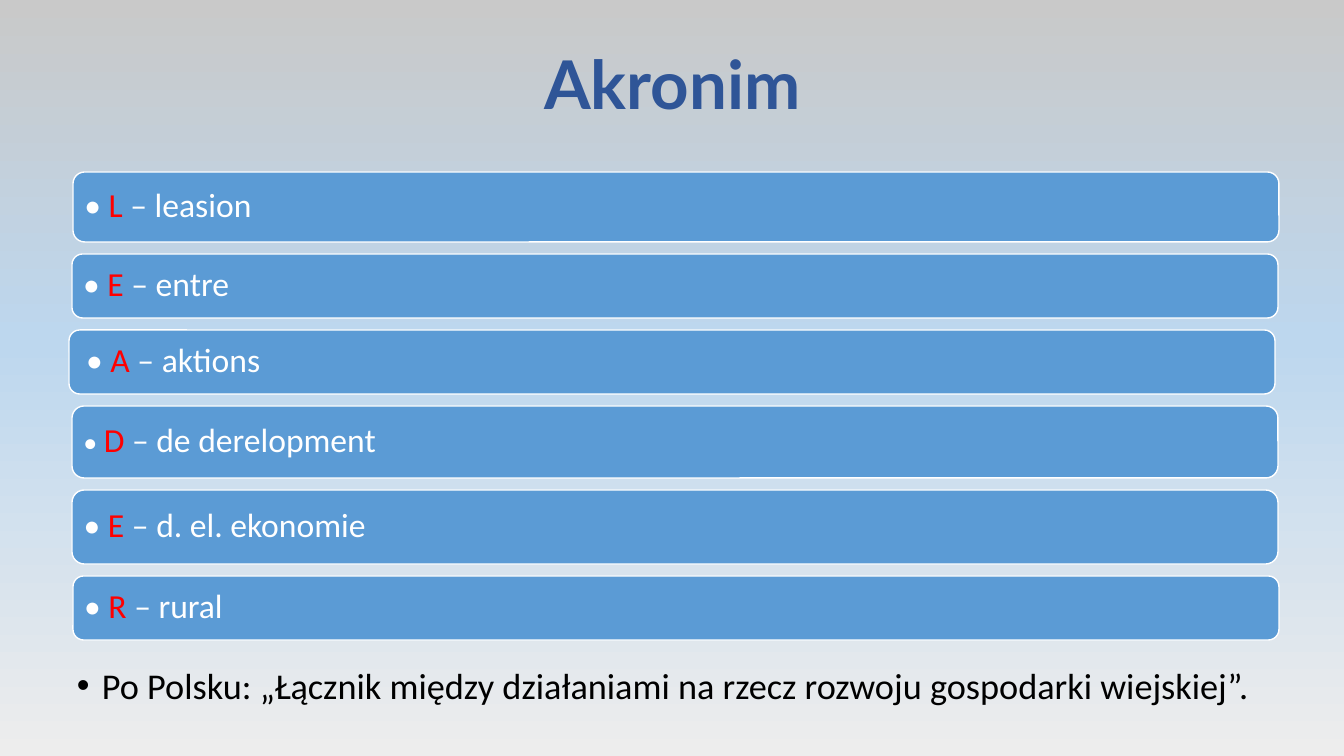
import copy

import pptx
import pptx.dml.color
import pptx.enum.shapes
import pptx.enum.text
import pptx.oxml
import pptx.oxml.ns
import pptx.util

PX = 914400 / 100.8
COLORS = {
    "title": "2F5597",
    "bar": "5B9BD5",
    "white": "FFFFFF",
    "letter": "FF0000",
    "black": "000000",
}
BACKGROUND = [(0, "C9C9C9"), (0.45, "BDD7EE"), (1, "EDEDED")]
BAR_GAP = 12
BARS = [
    {"letter": "L", "word": "leasion", "height": 70, "shift": 4},
    {"letter": "E", "word": "entre", "height": 64, "shift": 3},
    {"letter": "A", "word": "aktions", "height": 64, "shift": 0, "inset": 14},
    {"letter": "D", "word": "de derelopment", "height": 72, "shift": 3, "bullet_size": 20},
    {"letter": "E", "word": "d. el. ekonomie", "height": 74, "shift": 3},
    {"letter": "R", "word": "rural", "height": 64, "shift": 4},
]


def px(length):
    return pptx.util.Emu(round(length * PX))


def rgb(value):
    return pptx.dml.color.RGBColor.from_string(value)


def set_values(target, values):
    for name, value in values.items():
        setattr(target, name, value)


def add_span(para, text, color, size, font="Calibri", bold=False):
    span = para.add_run()
    span.text = text
    set_values(span.font, {"name": font, "size": pptx.util.Pt(size), "bold": bold})
    span.font.color.rgb = rgb(COLORS[color])


def add_text_box(page, box, anchor):
    shape = page.shapes.add_textbox(*map(px, box))
    set_values(shape.text_frame, {"word_wrap": True, "vertical_anchor": anchor})
    para = shape.text_frame.paragraphs[0]
    para.line_spacing = 0.9
    return para


def paint_background(page):
    fill = page.background.fill
    fill.gradient()
    fill.gradient_angle = 270
    stop_list = page.element.xpath(".//a:gsLst")[0]
    stop_list.insert(1, copy.deepcopy(stop_list[0]))
    for stop, (position, color) in zip(fill.gradient_stops, BACKGROUND):
        stop.position = position
        stop.color.rgb = rgb(color)


def add_title(page, box):
    para = add_text_box(page, box, pptx.enum.text.MSO_ANCHOR.MIDDLE)
    para.alignment = pptx.enum.text.PP_ALIGN.CENTER
    add_span(para, "Akronim", "title", 48, "Lato", True)


def add_bar(page, box, bar):
    shape = page.shapes.add_shape(
        pptx.enum.shapes.MSO_SHAPE.ROUNDED_RECTANGLE, *map(px, box))
    shape.shadow.inherit = False
    shape.fill.solid()
    shape.fill.fore_color.rgb = rgb(COLORS["bar"])
    shape.line.color.rgb = rgb(COLORS["white"])
    shape.line.width = pptx.util.Pt(1)
    set_values(shape.text_frame, {
        "word_wrap": True,
        "vertical_anchor": pptx.enum.text.MSO_ANCHOR.MIDDLE,
        "margin_left": px(bar.get("inset", 8)),
        "margin_top": px(8),
        "margin_bottom": px(8),
    })
    para = shape.text_frame.paragraphs[0]
    set_values(para, {"alignment": pptx.enum.text.PP_ALIGN.LEFT, "line_spacing": 0.9})
    add_span(para, "• ", "white", bar.get("bullet_size", 24))
    add_span(para, bar["letter"] + " ", "letter", 24)
    add_span(para, "– " + bar["word"], "white", 24)


def add_bars(page, box):
    left, top, width = box
    for bar in BARS:
        add_bar(page, (left + bar["shift"], top, width, bar["height"]), bar)
        top += bar["height"] + BAR_GAP


def add_translation(page, box):
    para = add_text_box(page, box, pptx.enum.text.MSO_ANCHOR.TOP)
    properties = para._p.get_or_add_pPr()
    properties.set("marL", str(px(25)))
    properties.set("indent", str(px(-25)))
    namespace = pptx.oxml.ns.nsdecls("a")
    for tag in ('buFont {} typeface="Arial"', 'buChar {} char="•"'):
        properties.append(pptx.oxml.parse_xml("<a:" + tag.format(namespace) + "/>"))
    add_span(
        para,
        "Po Polsku: „Łącznik między działaniami na rzecz rozwoju gospodarki wiejskiej”.",
        "black", 25.9)


def main():
    deck = pptx.Presentation()
    set_values(deck, {"slide_width": px(1344), "slide_height": px(756)})
    page = deck.slides.add_slide(deck.slide_layouts[6])
    paint_background(page)
    add_title(page, (93, 40, 1159, 95))
    add_bars(page, (69, 172, 1206))
    add_translation(page, (67, 663, 1213, 76))
    deck.save("out.pptx")


if __name__ == "__main__":
    main()
